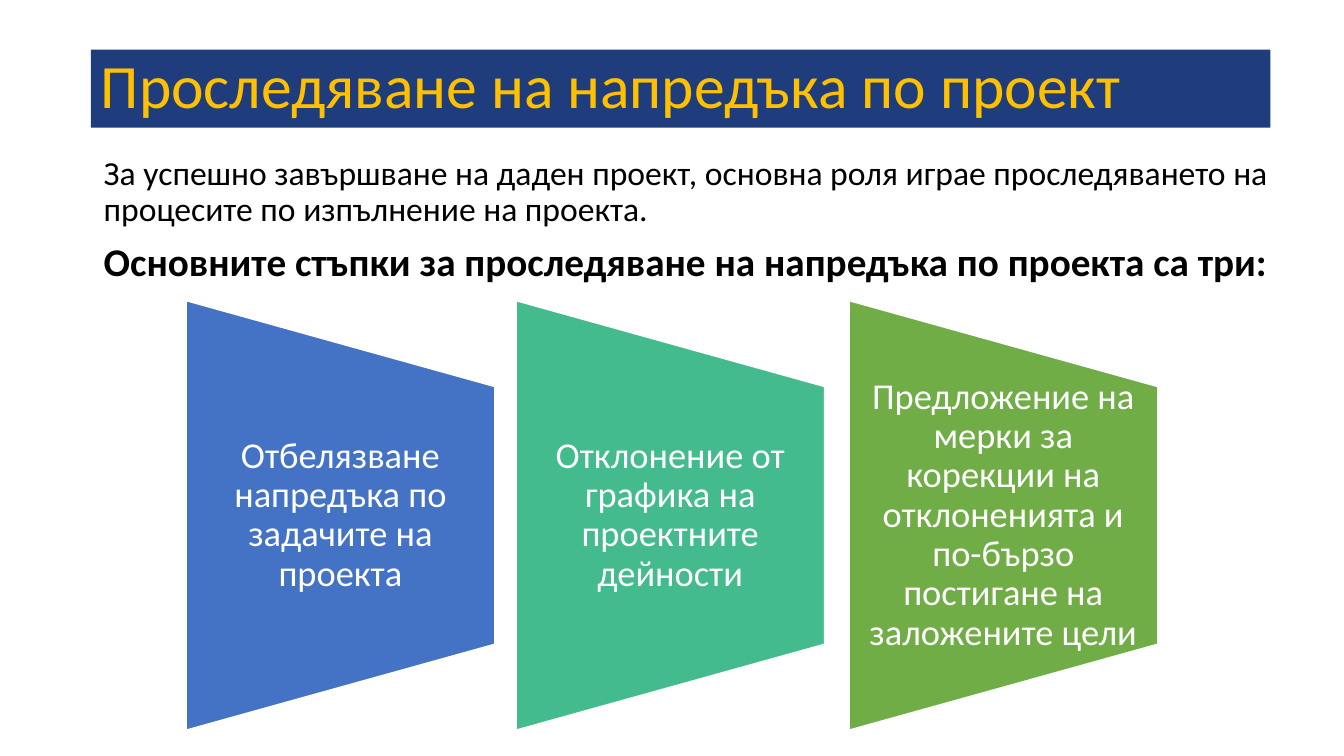
from pptx import Presentation
from pptx.dml.color import RGBColor
from pptx.enum.shapes import MSO_SHAPE as Shape
from pptx.enum.text import MSO_ANCHOR as Anchor, PP_ALIGN as Align
from pptx.util import Inches, Pt

COLORS = {
    "navy": "1F3D7C", "gold": "FFC000", "black": "000000", "white": "FFFFFF",
    "blue": "4472C4", "teal": "43BB8D", "green": "70AD47",
}
# Left edge in percent of the slide width, colour, text
STEPS = [
    (13.86, "blue", "Отбелязване напредъка по задачите на проекта"),
    (38.4, "teal", "Отклонение от графика на проектните дейности"),
    (63.18, "green", "Предложение на мерки за корекции на отклоненията "
                     "и по-бързо постигане на заложените цели"),
]

deck = Presentation()
deck.slide_width, deck.slide_height = Inches(13.33), Inches(7.5)
column, row = deck.slide_width / 100, deck.slide_height / 100
slide = deck.slides.add_slide(deck.slide_layouts[6])
shapes = slide.shapes


def area(left, top, width, height):
    """Turn percentages of the slide into a position and a size."""
    return [round(length) for length in
            (left * column, top * row, width * column, height * row)]


def write(para, text, size, color, bold=False):
    para.line_spacing = 0.9
    span = para.add_run()
    span.text = text
    span.font.name = "Calibri"
    span.font.size = Pt(size)
    span.font.bold = bold
    span.font.color.rgb = RGBColor.from_string(COLORS[color])


# Title band
title = shapes.add_shape(Shape.RECTANGLE, *area(6.76, 6.57, 87.77, 10.33))
title.shadow.inherit = False
title.fill.solid()
title.fill.fore_color.rgb = RGBColor.from_string(COLORS["navy"])
title.line.fill.background()
title.text_frame.vertical_anchor = Anchor.MIDDLE
title.text_frame.paragraphs[0].alignment = Align.LEFT
write(title.text_frame.paragraphs[0], "Проследяване на напредъка по проект", 44, "gold")

# Introduction
intro = shapes.add_textbox(*area(6.98, 20, 88.9, 18))
intro.text_frame.word_wrap = True
lead = intro.text_frame.paragraphs[0]
write(lead, "За успешно завършване на даден проект, основна роля играе "
            "проследяването на процесите по изпълнение на проекта.", 24, "black")
heading = intro.text_frame.add_paragraph()
heading.space_before = Pt(10)
write(heading, "Основните стъпки за проследяване на напредъка по проекта са три:",
      28, "black", bold=True)

# Three steps: a trapezoid turned on its side, with upright text over it
middle, step_width, step_height, text_height = 68.17, 22.96, 56.8, 34.13
for step_left, color, text in STEPS:
    left, top, width, height = area(step_left, middle - step_height / 2,
                                    step_width, step_height)
    step = shapes.add_shape(Shape.FLOWCHART_MANUAL_OPERATION,
                            left + (width - height) // 2, top + (height - width) // 2,
                            height, width)
    step.rotation = 270
    step.shadow.inherit = False
    step.fill.solid()
    step.fill.fore_color.rgb = RGBColor.from_string(COLORS[color])
    step.line.color.rgb = RGBColor.from_string(COLORS["white"])
    step.line.width = Pt(1)

    box = shapes.add_textbox(*area(step_left, middle - text_height / 2,
                                   step_width, text_height))
    frame = box.text_frame
    frame.word_wrap = True
    frame.vertical_anchor = Anchor.MIDDLE
    frame.margin_left = frame.margin_right = Inches(0.18)
    frame.margin_top = frame.margin_bottom = 0
    frame.paragraphs[0].alignment = Align.CENTER
    write(frame.paragraphs[0], text, 26, "white")

deck.save("out.pptx")
